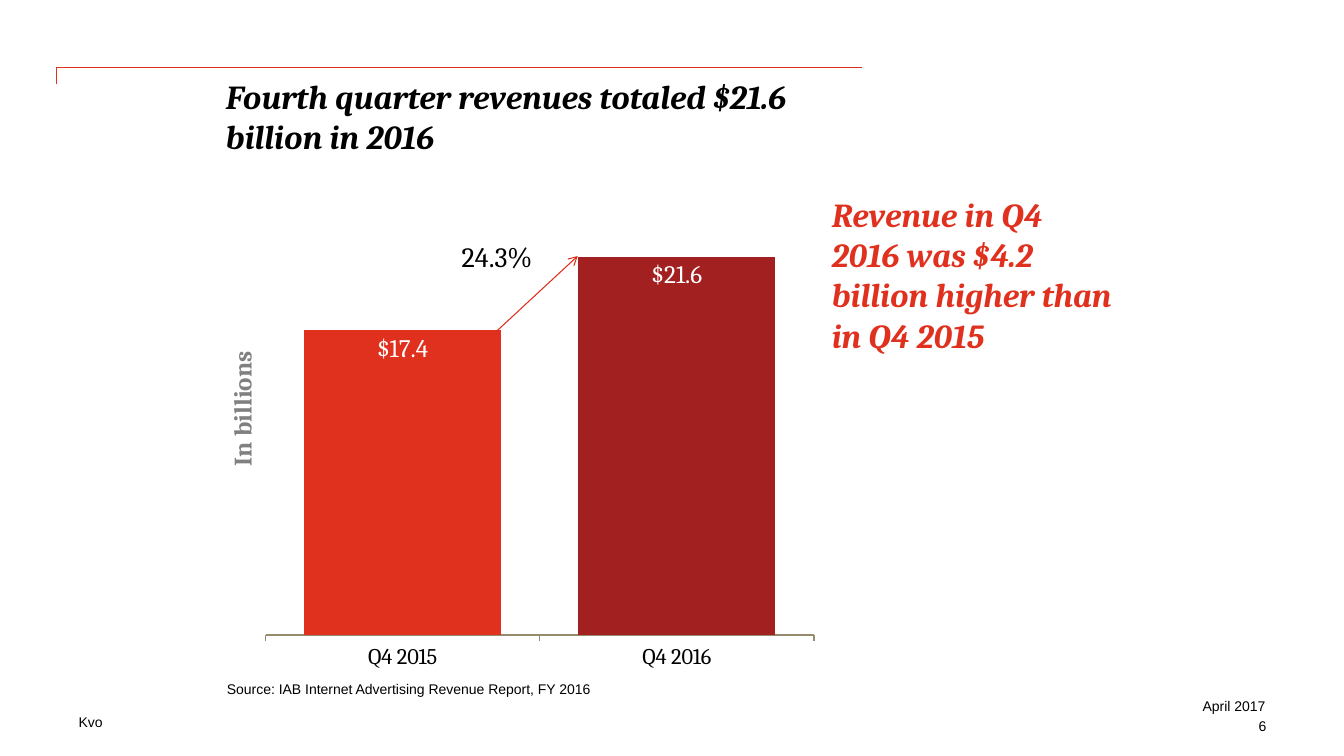
from lxml import etree
from pptx import Presentation
from pptx.chart.data import CategoryChartData
from pptx.dml.color import RGBColor
from pptx.enum.chart import XL_CHART_TYPE, XL_LABEL_POSITION, XL_TICK_LABEL_POSITION, XL_TICK_MARK
from pptx.enum.shapes import MSO_CONNECTOR
from pptx.enum.text import MSO_ANCHOR, MSO_AUTO_SIZE, PP_ALIGN
from pptx.oxml import parse_xml
from pptx.oxml.ns import nsdecls, qn
from pptx.util import Inches, Pt

COLUMN_CLUSTERED = XL_CHART_TYPE.COLUMN_CLUSTERED
INSIDE_END = XL_LABEL_POSITION.INSIDE_END
LABELS_LOW = XL_TICK_LABEL_POSITION.LOW
TICK_OUTSIDE = XL_TICK_MARK.OUTSIDE
TICK_NONE = XL_TICK_MARK.NONE
STRAIGHT = MSO_CONNECTOR.STRAIGHT
TOP, BOTTOM = MSO_ANCHOR.TOP, MSO_ANCHOR.BOTTOM
NO_AUTOSIZE = MSO_AUTO_SIZE.NONE
LEFT, CENTER, RIGHT = PP_ALIGN.LEFT, PP_ALIGN.CENTER, PP_ALIGN.RIGHT

COLORS = {
    "red": "E0301E",
    "dark_red": "A32020",
    "arrow": "E02B19",
    "axis": "968C6D",
    "gray": "808080",
    "black": "000000",
    "white": "FFFFFF",
}
SERIF, SANS = "Cambria", "Arial"


def color(name):
    return RGBColor.from_string(COLORS[name])


class SlideBuilder:
    def __init__(self, presentation):
        self.slide = presentation.slides.add_slide(presentation.slide_layouts[1])
        self.shapes = self.slide.shapes

    def style_font(self, font, size, name, color_name, bold=False, italic=False):
        font.size = Pt(size)
        font.name = name
        font.bold = bold
        font.italic = italic
        font.color.rgb = color(color_name)

    def fill_text(self, shape, box, text, size, name=SERIF, color_name="black",
                  bold=False, italic=False, align=LEFT, anchor=TOP):
        shape.left, shape.top, shape.width, shape.height = map(Inches, box)
        frame = shape.text_frame
        frame.word_wrap = True
        frame.auto_size = NO_AUTOSIZE
        frame.vertical_anchor = anchor
        frame.margin_left = frame.margin_right = 0
        frame.margin_top = frame.margin_bottom = 0
        paragraph = frame.paragraphs[0]
        paragraph.alignment = align
        paragraph.space_before = Pt(0)
        run = paragraph.add_run()
        run.text = text
        self.style_font(run.font, size, name, color_name, bold, italic)
        return paragraph

    def title(self, box, text):
        self.fill_text(self.shapes.title, box, text, 24, bold=True, italic=True)

    def body(self, box, text):
        paragraph = self.fill_text(self.slide.placeholders[1], box, text, 24,
                                   color_name="red", bold=True, italic=True)
        paragraph.space_after = Pt(9)
        properties = paragraph._p.get_or_add_pPr()
        properties.set("marL", "0")
        properties.set("indent", "0")
        etree.SubElement(properties, qn("a:buNone"))

    def text(self, box, text, size, rotation=0, **style):
        shape = self.shapes.add_textbox(*map(Inches, box))
        shape.rotation = rotation
        self.fill_text(shape, box, text, size, **style)

    def rule(self, points):
        corners = [(Inches(x), Inches(y)) for x, y in points]
        builder = self.shapes.build_freeform(*corners[0])
        builder.add_line_segments(corners[1:], close=False)
        shape = builder.convert_to_shape()
        shape.shadow.inherit = False
        shape.fill.background()
        shape.line.color.rgb = color("red")
        shape.line.width = Pt(1)

    def arrow(self, start, end):
        connector = self.shapes.add_connector(STRAIGHT, *map(Inches, start + end))
        connector.line.color.rgb = color("arrow")
        connector.line.width = Pt(0.75)
        etree.SubElement(connector.line._get_or_add_ln(), qn("a:tailEnd"), type="arrow")
        etree.SubElement(connector._element.spPr, qn("a:effectLst"))

    def column_chart(self, box, categories, values, point_colors, plot_box):
        data = CategoryChartData()
        data.categories = categories
        data.add_series("Series 1", values)
        chart = self.shapes.add_chart(COLUMN_CLUSTERED, *map(Inches, box), data).chart
        chart.has_legend = False
        chart.has_title = False
        self.style_font(chart.font, 18, SERIF, "black")

        value_axis = chart.value_axis
        value_axis.minimum_scale = 0
        value_axis.maximum_scale = 25
        value_axis.has_major_gridlines = False
        value_axis.visible = False

        category_axis = chart.category_axis
        category_axis.major_tick_mark = TICK_OUTSIDE
        category_axis.minor_tick_mark = TICK_NONE
        category_axis.tick_label_position = LABELS_LOW
        category_axis.format.line.color.rgb = color("axis")
        category_axis.format.line.width = Pt(1)
        self.style_font(category_axis.tick_labels.font, 16, SERIF, "black")

        plot = chart.plots[0]
        plot.gap_width = 39
        plot.vary_by_categories = False
        series = plot.series[0]
        for index, name in enumerate(point_colors):
            fill = series.points[index].format.fill
            fill.solid()
            fill.fore_color.rgb = color(name)

        labels = series.data_labels
        labels.show_value = True
        labels.position = INSIDE_END
        labels.number_format = '"$"#,##0.0'
        labels.number_format_is_linked = False
        self.style_font(labels.font, 18, SERIF, "white")
        self.place_plot(chart, plot_box)

    def place_plot(self, chart, plot_box):
        modes = '<c:layoutTarget val="inner"/><c:xMode val="edge"/><c:yMode val="edge"/>'
        sizes = "".join(f'<c:{key} val="{size}"/>' for key, size in zip("xywh", plot_box))
        layout = parse_xml(
            f'<c:layout {nsdecls("c")}><c:manualLayout>{modes}{sizes}'
            "</c:manualLayout></c:layout>")
        plot_area = chart._chartSpace.chart.plotArea
        for old_layout in plot_area.findall(qn("c:layout")):
            plot_area.remove(old_layout)
        plot_area.insert(0, layout)


def main():
    presentation = Presentation()
    presentation.slide_width = Inches(13.33)
    presentation.slide_height = Inches(7.5)
    builder = SlideBuilder(presentation)

    builder.rule([(0.56, 0.83), (0.56, 0.67), (8.55, 0.67)])
    builder.title((2.24, 0.75, 5.83, 1), "Fourth quarter revenues totaled $21.6 billion in 2016")
    builder.body((8.25, 1.92, 2.83, 2.33),
                 "Revenue in Q4 2016 was $4.2 billion higher than in Q4 2015")
    builder.column_chart((2.25, 1.92, 5.83, 4.83), ["Q4 2015", "Q4 2016"], [17.4, 21.6],
                         ["red", "dark_red"], (0.066, 0.008, 0.934, 0.899))
    builder.text((1.08, 3.89, 2.66, 0.33), "In billions", 18, rotation=270,
                 color_name="gray", bold=True, align=CENTER)
    builder.arrow((4.91, 3.3), (5.73, 2.54))
    builder.text((4.58, 2.38, 0.83, 0.3), "24.3%", 20)
    builder.text((2.25, 6.75, 5.75, 0.17),
                 "Source: IAB Internet Advertising Revenue Report, FY 2016", 10,
                 name=SANS, anchor=BOTTOM)
    builder.text((0.78, 7.08, 3.78, 0.17), "Kvo", 10, name=SANS)
    builder.text((10.33, 6.92, 2.22, 0.17), "April 2017", 10, name=SANS, align=RIGHT)
    builder.text((10.33, 7.12, 2.23, 0.17), "6", 10, name=SANS, align=RIGHT)
    presentation.save("out.pptx")


if __name__ == "__main__":
    main()
